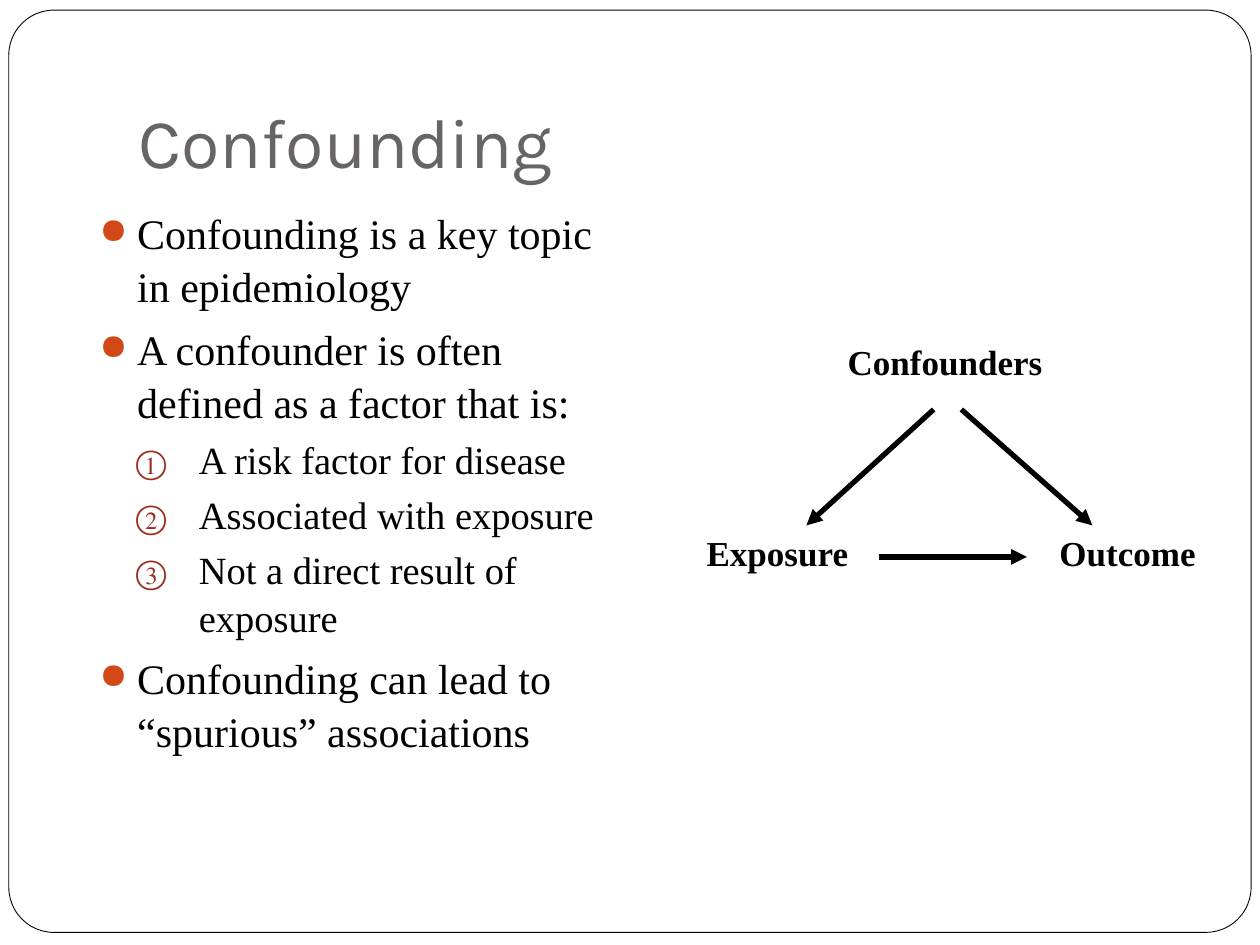
from dataclasses import dataclass

from lxml import etree
from pptx import Presentation
from pptx.dml.color import RGBColor
from pptx.enum.shapes import MSO_CONNECTOR, MSO_SHAPE
from pptx.enum.text import MSO_ANCHOR, MSO_AUTO_SIZE, PP_ALIGN
from pptx.oxml.ns import qn
from pptx.util import Inches, Pt

ROUND_RECT = MSO_SHAPE.ROUNDED_RECTANGLE
STRAIGHT = MSO_CONNECTOR.STRAIGHT
BOTTOM = MSO_ANCHOR.BOTTOM
NO_FIT = MSO_AUTO_SIZE.NONE
LEFT, CENTER = PP_ALIGN.LEFT, PP_ALIGN.CENTER

COLORS = {
    "paper": "FFFFFF",
    "ink": "000000",
    "title": "696464",
    "dot": "D34817",
    "number": "9B2D1F",
}
SERIF = "Times New Roman"


@dataclass
class Level:
    size: int
    before: float
    margin: float
    hanging: float
    color: str
    bullet: tuple[str, dict[str, str]]


@dataclass
class Point:
    text: str
    level: int = 0


@dataclass
class Label:
    text: str
    left: float
    top: float
    width: float
    align: PP_ALIGN = LEFT


@dataclass
class Arrow:
    start: tuple[float, float]
    end: tuple[float, float]


LEVELS = [
    Level(24, 5.8, 0.3, 0.3, "dot", ("a:buChar", {"char": "●"})),
    Level(22, 3.7, 0.79, 0.5, "number", ("a:buAutoNum", {"type": "circleNumDbPlain"})),
]
POINTS = [
    Point("Confounding is a key topic in epidemiology"),
    Point("A confounder is often defined as a factor that is:"),
    Point("A risk factor for disease", 1),
    Point("Associated with exposure", 1),
    Point("Not a direct result of exposure", 1),
    Point("Confounding can lead to “spurious” associations"),
]
LABELS = [
    Label("Exposure", 5.51, 4.17, 1.47),
    Label("Outcome", 8.31, 4.17, 1.36),
    Label("Confounders", 6.21, 2.65, 2.58, CENTER),
]
ARROWS = [
    Arrow((6.98, 4.42), (8.15, 4.42)),
    Arrow((7.41, 3.25), (6.4, 4.17)),
    Arrow((7.63, 3.25), (8.67, 4.17)),
]


def rgb(name: str) -> RGBColor:
    return RGBColor.from_string(COLORS[name])


def write(p, text: str, size: int, color: str = "ink", name: str = SERIF, bold: bool = False) -> None:
    r = p.add_run()
    r.text = text
    for key, value in {"size": Pt(size), "name": name, "bold": bold}.items():
        setattr(r.font, key, value)
    r.font.color.rgb = rgb(color)


def add_text_frame(s, left: float, top: float, width: float, height: float):
    tf = s.shapes.add_textbox(*map(Inches, (left, top, width, height))).text_frame
    tf.word_wrap = True
    return tf


def add_frame(s) -> None:
    sp = s.shapes.add_shape(ROUND_RECT, *map(Inches, (0.07, 0.08, 9.86, 7.32)))
    sp.adjustments[0] = 0.049
    sp.shadow.inherit = False
    sp.fill.solid()
    sp.fill.fore_color.rgb = rgb("paper")
    sp.line.color.rgb = rgb("ink")
    sp.line.width = Pt(0.5)
    s.shapes.title.element.addprevious(sp.element)


def add_title(s, text: str) -> None:
    sp = s.shapes.title
    box = {"left": 1, "top": 0.3, "width": 8.5, "height": 1.25}
    for key, value in box.items():
        setattr(sp, key, Inches(value))
    tf = sp.text_frame
    layout = {"vertical_anchor": BOTTOM, "margin_bottom": Inches(0.1),
              "word_wrap": True, "auto_size": NO_FIT}
    for key, value in layout.items():
        setattr(tf, key, value)
    p = tf.paragraphs[0]
    p.alignment = LEFT
    write(p, text, 40, "title", "Karla")


def add_bullet(p, level: Level) -> None:
    pPr = p._p.get_or_add_pPr()
    pPr.set("marL", str(Inches(level.margin)))
    pPr.set("indent", str(-Inches(level.hanging)))
    color = etree.SubElement(pPr, qn("a:buClr"))
    etree.SubElement(color, qn("a:srgbClr"), val=COLORS[level.color])
    etree.SubElement(pPr, qn("a:buSzPct"), val="85000")
    tag, attributes = level.bullet
    etree.SubElement(pPr, qn(tag), attributes)


def add_points(s, points: list[Point]) -> None:
    tf = add_text_frame(s, 0.69, 1.58, 4.41, 5.39)
    for i, point in enumerate(points):
        p = tf.add_paragraph() if i else tf.paragraphs[0]
        level = LEVELS[point.level]
        spacing = {"level": point.level, "line_spacing": 1.05, "space_before": Pt(level.before)}
        for key, value in spacing.items():
            setattr(p, key, value)
        add_bullet(p, level)
        write(p, point.text, level.size)


def add_label(s, label: Label) -> None:
    p = add_text_frame(s, label.left, label.top, label.width, 0.44).paragraphs[0]
    p.alignment = label.align
    write(p, label.text, 20, bold=True)


def add_arrow(s, arrow: Arrow) -> None:
    line = s.shapes.add_connector(STRAIGHT, *map(Inches, arrow.start + arrow.end))
    line.line.color.rgb = rgb("ink")
    line.line.width = Pt(3)
    etree.SubElement(line.line._get_or_add_ln(), qn("a:tailEnd"), type="triangle")
    etree.SubElement(line.element.spPr, qn("a:effectLst"))


def main() -> None:
    prs = Presentation()
    prs.slide_width, prs.slide_height = Inches(10), Inches(7.5)
    s = prs.slides.add_slide(prs.slide_layouts[5])
    add_frame(s)
    add_title(s, "Confounding")
    add_points(s, POINTS)
    for label in LABELS:
        add_label(s, label)
    for arrow in ARROWS:
        add_arrow(s, arrow)
    prs.save("out.pptx")


if __name__ == "__main__":
    main()
